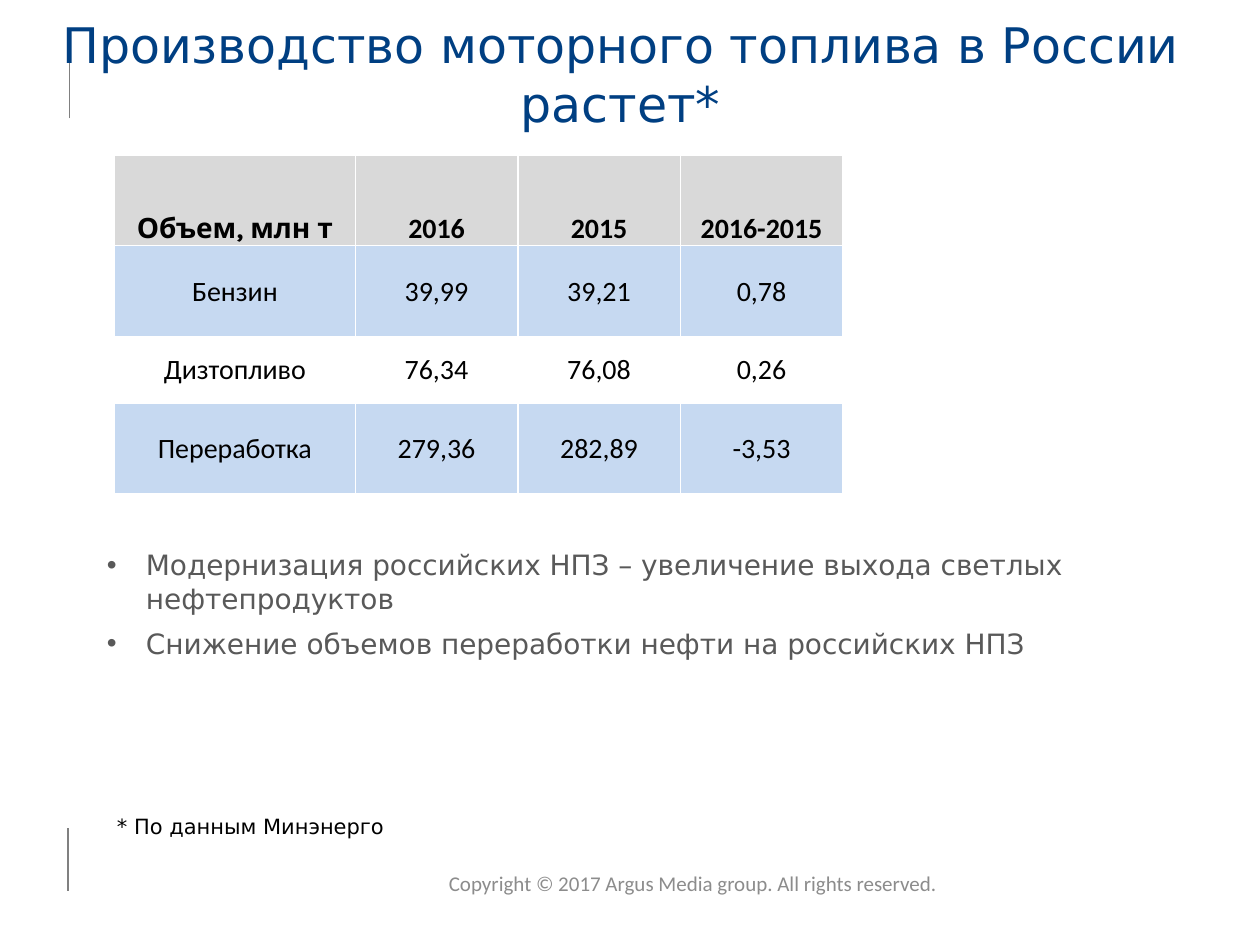
from lxml import etree
from pptx import Presentation
from pptx.dml.color import RGBColor
from pptx.enum.shapes import MSO_CONNECTOR
from pptx.enum.text import MSO_ANCHOR, PP_ALIGN
from pptx.oxml.ns import qn
from pptx.util import Inches, Pt

LEFT, CENTER = PP_ALIGN.LEFT, PP_ALIGN.CENTER
TOP, MIDDLE, BOTTOM = MSO_ANCHOR.TOP, MSO_ANCHOR.MIDDLE, MSO_ANCHOR.BOTTOM
STRAIGHT = MSO_CONNECTOR.STRAIGHT
SANS = "DejaVu Sans"

COLORS = {
    "title": "003F82", "body": "595959", "footer": "8C8C8C", "text": "000000",
    "rule": "808080", "header": "D9D9D9", "band": "C6D9F1", "white": "FFFFFF",
}

# Content
TITLE = "Производство моторного топлива в России растет*"
TABLE = [
    ("Объем, млн т", "2016", "2015", "2016-2015"),
    ("Бензин", "39,99", "39,21", "0,78"),
    ("Дизтопливо", "76,34", "76,08", "0,26"),
    ("Переработка", "279,36", "282,89", "-3,53"),
]
COL_WIDTHS = [1.91, 1.29, 1.29, 1.29]
ROW_HEIGHTS = [0.72, 0.72, 0.53, 0.72]
BULLETS = [
    ("Модернизация российских НПЗ – увеличение выхода светлых нефтепродуктов",
     (0.75, 4.3, 9.13, 0.64)),
    ("Снижение объемов переработки нефти на российских НПЗ",
     (0.75, 4.92, 8.35, 0.37)),
]
FOOTNOTE = "* По данным Минэнерго"
COPYRIGHT = "Copyright © 2017 Argus Media group. All rights reserved."
RULES = [(0.55, 0.35, 0.94), (0.54, 6.57, 7.07)]  # x, top, bottom


def color(name):
    return RGBColor.from_string(COLORS[name])


def add_run(p, text, size, font, color_name, bold=False):
    r = p.add_run()
    r.text = text
    r.font.size = Pt(size)
    r.font.name = font
    r.font.bold = bold
    r.font.color.rgb = color(color_name)


def add_text(slide, box, text, size, font, color_name,
             align=LEFT, anchor=TOP, bullet=False):
    tf = slide.shapes.add_textbox(*map(Inches, box)).text_frame
    tf.word_wrap = True
    tf.vertical_anchor = anchor
    p = tf.paragraphs[0]
    p.alignment = align
    if bullet:
        pPr = p._p.get_or_add_pPr()
        pPr.set("marL", str(Inches(0.31)))
        pPr.set("indent", str(Inches(-0.31)))
        etree.SubElement(pPr, qn("a:buFont"), typeface="Arial")
        etree.SubElement(pPr, qn("a:buChar"), char="•")
    add_run(p, text, size, font, color_name)
    return tf


def add_rule(slide, x, top, bottom):
    line = slide.shapes.add_connector(
        STRAIGHT, Inches(x), Inches(bottom), Inches(x), Inches(top))
    line.line.color.rgb = color("rule")
    line.line.width = Pt(0.75)
    etree.SubElement(line._element.spPr, qn("a:effectLst"))


def add_borders(cell):
    tcPr = cell._tc.get_or_add_tcPr()
    for side in ("lnL", "lnR", "lnT", "lnB"):
        ln = etree.SubElement(tcPr, qn(f"a:{side}"), w=str(Pt(1)))
        fill = etree.SubElement(ln, qn("a:solidFill"))
        etree.SubElement(fill, qn("a:srgbClr"), val=COLORS["white"])


def add_volume_table(slide):
    table = slide.shapes.add_table(
        len(TABLE), len(COL_WIDTHS), Inches(0.91), Inches(1.23),
        Inches(sum(COL_WIDTHS)), Inches(sum(ROW_HEIGHTS))).table
    for column, width in zip(table.columns, COL_WIDTHS):
        column.width = Inches(width)
    for i, (row, height, values) in enumerate(zip(table.rows, ROW_HEIGHTS, TABLE)):
        row.height = Inches(height)
        header = i == 0
        fill = "header" if header else "band" if i % 2 else "white"
        for j, (cell, value) in enumerate(zip(row.cells, values)):
            add_borders(cell)
            cell.fill.solid()
            cell.fill.fore_color.rgb = color(fill)
            cell.margin_left = cell.margin_right = cell.margin_top = Inches(0.01)
            cell.margin_bottom = 0
            cell.vertical_anchor = BOTTOM if header else MIDDLE
            p = cell.text_frame.paragraphs[0]
            p.alignment = CENTER
            font = "Karla" if header and j == 0 else "Calibri"
            add_run(p, value, 16, font, "text", bold=header)


def main():
    prs = Presentation()
    prs.slide_width, prs.slide_height = Inches(10), Inches(7.5)
    slide = prs.slides.add_slide(prs.slide_layouts[6])

    # Margin rules
    for rule in RULES:
        add_rule(slide, *rule)

    # Title
    tf = add_text(slide, (0.43, 0.29, 8.99, 0.76), TITLE, 28, SANS, "title",
                  CENTER, BOTTOM)
    tf.margin_left = tf.margin_right = tf.margin_top = tf.margin_bottom = 0

    # Footer and footnote
    add_text(slide, (3.33, 6.81, 4.34, 0.4), COPYRIGHT, 12, "Calibri", "footer",
             CENTER, MIDDLE)
    add_text(slide, (0.83, 6.41, 7.23, 0.3), FOOTNOTE, 12, SANS, "text")

    # Table and conclusions
    add_volume_table(slide)
    for text, box in BULLETS:
        add_text(slide, box, text, 16, SANS, "body", bullet=True)

    prs.save("out.pptx")


if __name__ == "__main__":
    main()
